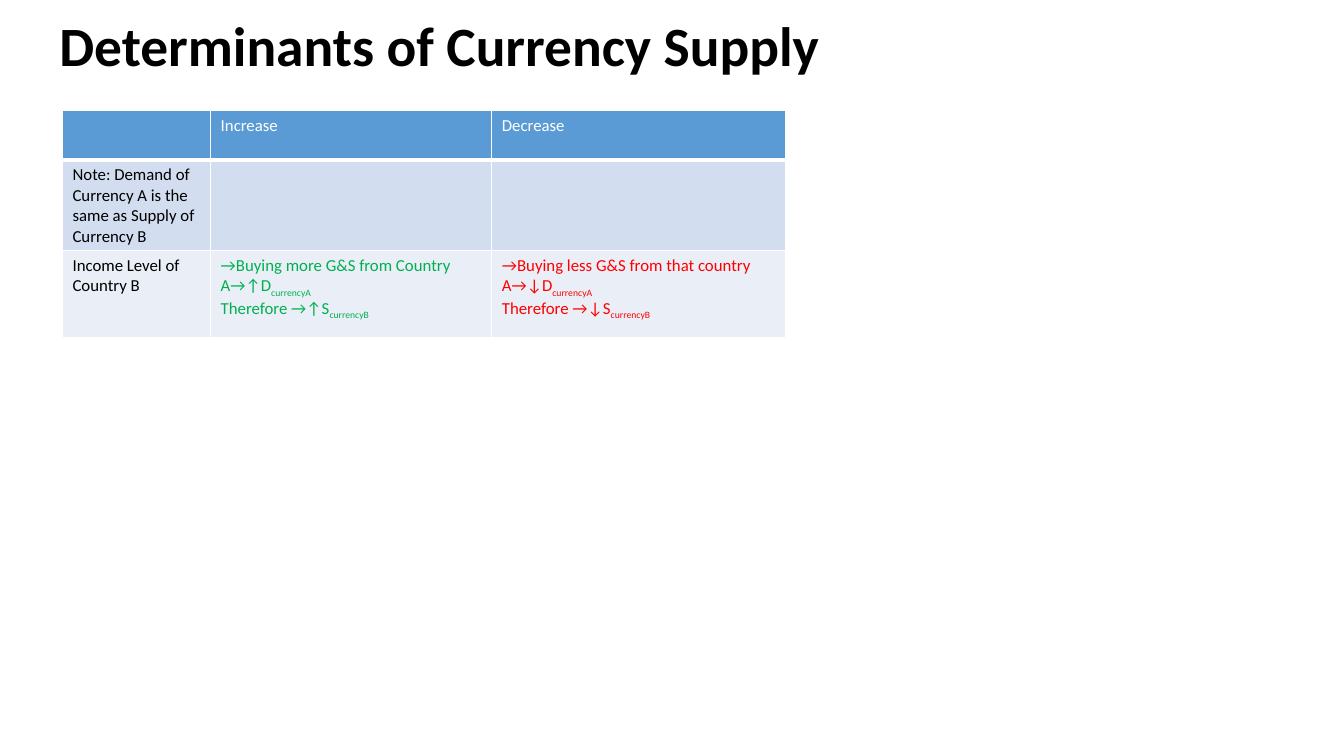
import pptx
import pptx.dml.color
import pptx.enum.text
import pptx.oxml
import pptx.oxml.ns
import pptx.util

Pt = pptx.util.Pt
FONT = "Calibri"
BLACK, WHITE, GREEN, RED = "000000", "FFFFFF", "00B050", "FF0000"
ROW_FILLS = ["5B9BD5", "D2DEEF", "EAEFF7"]
COLUMN_WIDTHS = [105.84, 200.88, 209.52]
ROW_HEIGHTS = [35.28, 58.32, 61.92]


def rgb(hex_color):
    return pptx.dml.color.RGBColor.from_string(hex_color)


def add_run(paragraph, text, size, color, bold=False, subscript=False):
    run = paragraph.add_run()
    run.text = text
    run.font.name = FONT
    run.font.size = Pt(size)
    run.font.bold = bold
    run.font.color.rgb = rgb(color)
    if subscript:
        run.font._element.set("baseline", "-25000")


def set_borders(cell, bottom_width):
    """White rules on all four sides; they must precede the fill."""
    properties = cell._tc.get_or_add_tcPr()
    for index, side in enumerate("LRTB"):
        width = Pt(bottom_width if side == "B" else 1)
        properties.insert(index, pptx.oxml.parse_xml(
            f'<a:ln{side} {pptx.oxml.ns.nsdecls("a")} w="{width}"><a:solidFill>'
            f'<a:srgbClr val="{WHITE}"/></a:solidFill></a:ln{side}>'))


def effect(amount, ending, arrow):
    """Two lines, each a statement and its subscript."""
    return [
        [f"→Buying {amount} G&S from {ending} A→{arrow}D", "currencyA"],
        [f"Therefore →{arrow}S", "currencyB"],
    ]


def add_title(slide, left, top, width, height):
    title = slide.shapes.add_textbox(Pt(left), Pt(top), Pt(width), Pt(height))
    frame = title.text_frame
    frame.word_wrap = True
    frame.vertical_anchor = pptx.enum.text.MSO_ANCHOR.MIDDLE
    heading = frame.paragraphs[0]
    heading.line_spacing = 0.9
    add_run(heading, "Determinants of Currency Supply", 39.6, BLACK, bold=True)


def add_determinants(slide, left, top):
    # Each cell is a list of lines; each line is a text and maybe its subscript
    rows = [
        [[], [["Increase"]], [["Decrease"]]],
        [[["Note: Demand of Currency A is the same as Supply of Currency B"]], [], []],
        [[["Income Level of Country B"]],
         effect("more", "Country", "↑"), effect("less", "that country", "↓")],
    ]
    determinants = slide.shapes.add_table(
        len(ROW_HEIGHTS), len(COLUMN_WIDTHS), Pt(left), Pt(top),
        Pt(sum(COLUMN_WIDTHS)), Pt(sum(ROW_HEIGHTS))).table
    for column, width in zip(determinants.columns, COLUMN_WIDTHS):
        column.width = Pt(width)
    for row, height in zip(determinants.rows, ROW_HEIGHTS):
        row.height = Pt(height)

    for r, row in enumerate(rows):
        colors = [WHITE] * 3 if r == 0 else [BLACK, GREEN, RED]
        for c, lines in enumerate(row):
            cell = determinants.cell(r, c)
            cell.fill.solid()
            cell.fill.fore_color.rgb = rgb(ROW_FILLS[r])
            set_borders(cell, 3 if r == 0 else 1)
            for n, line in enumerate(lines):
                frame = cell.text_frame
                paragraph = frame.add_paragraph() if n else frame.paragraphs[0]
                for part, text in enumerate(line):
                    add_run(paragraph, text, 12, colors[c], subscript=part == 1)


def main():
    presentation = pptx.Presentation()
    presentation.slide_width = Pt(960)
    presentation.slide_height = Pt(540)
    slide = presentation.slides.add_slide(presentation.slide_layouts[6])
    add_title(slide, 35.28, 12.24, 828, 44.64)
    add_determinants(slide, 44.64, 78.8)
    presentation.save("out.pptx")


if __name__ == "__main__":
    main()
